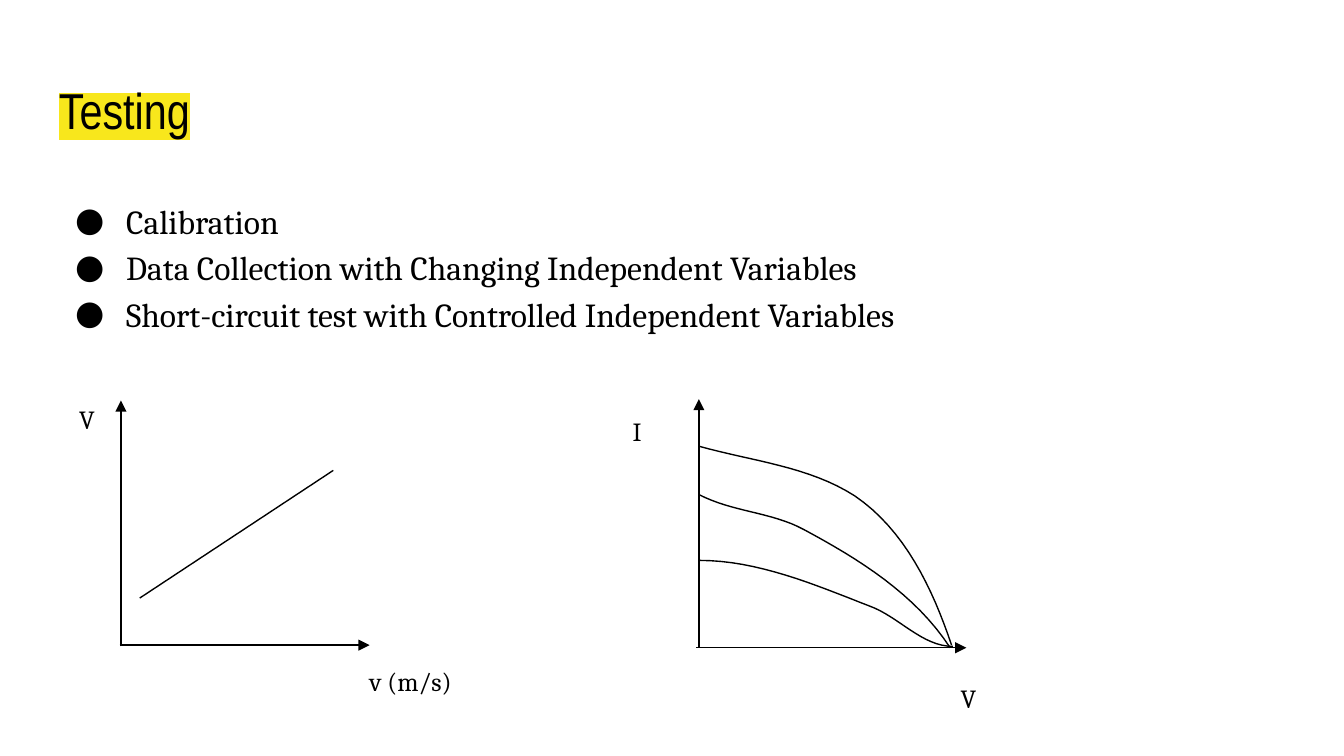
from lxml.etree import SubElement
from pptx import Presentation
from pptx.dml.color import RGBColor
from pptx.enum.shapes import MSO_CONNECTOR
from pptx.oxml.ns import qn
from pptx.util import Inches, Pt

COLORS = {"ink": "000000", "highlight": "F8E71C"}


class SlideBuilder:
    """Holds the style and the current slide and draws each kind of element."""

    title_font = "Arial Narrow"
    body_font = "Cambria"
    line_width = Pt(0.75)
    curve_steps = 16

    def __init__(self, slide):
        self.slide = slide

    def text_frame(self, left, top, width, height):
        shape = self.slide.shapes.add_textbox(
            Inches(left), Inches(top), Inches(width), Inches(height))
        frame = shape.text_frame
        frame.word_wrap = True
        frame.margin_left = frame.margin_right = Inches(0.1)
        frame.margin_top = frame.margin_bottom = Inches(0.1)
        return frame

    def style_font(self, font, name, size):
        font.name = name
        font.size = Pt(size)
        font.color.rgb = RGBColor.from_string(COLORS["ink"])

    def title(self, text, left, top, width, height):
        paragraph = self.text_frame(left, top, width, height).paragraphs[0]
        run = paragraph.add_run()
        run.text = text
        self.style_font(run.font, self.title_font, 27)
        properties = run.font._element
        highlight = SubElement(properties, qn("a:highlight"))
        SubElement(highlight, qn("a:srgbClr"), val=COLORS["highlight"])
        properties.find(qn("a:solidFill")).addnext(highlight)

    def bullets(self, items, left, top, width, height):
        frame = self.text_frame(left, top, width, height)
        for index, item in enumerate(items):
            paragraph = frame.add_paragraph() if index else frame.paragraphs[0]
            paragraph.text = item
            paragraph.line_spacing = 1.15
            self.style_font(paragraph.font, self.body_font, 18)
            properties = paragraph._p.get_or_add_pPr()
            properties.set("marL", str(Inches(0.5)))
            properties.set("indent", str(Inches(-0.38)))
            color = SubElement(properties, qn("a:buClr"))
            SubElement(color, qn("a:srgbClr"), val=COLORS["ink"])
            SubElement(properties, qn("a:buSzPts"), val="1800")
            SubElement(properties, qn("a:buFont"), typeface=self.body_font)
            SubElement(properties, qn("a:buChar"), char="●")
            properties.append(properties.find(qn("a:defRPr")))

    def label(self, text, left, top, width):
        paragraph = self.text_frame(left, top, width, 0.44).paragraphs[0]
        paragraph.text = text
        self.style_font(paragraph.font, self.body_font, 14)

    def style_line(self, line):
        line.color.rgb = RGBColor.from_string(COLORS["ink"])
        line.width = self.line_width

    def line(self, start, end, arrow=False):
        connector = self.slide.shapes.add_connector(
            MSO_CONNECTOR.STRAIGHT, *map(Inches, start + end))
        self.style_line(connector.line)
        if arrow:
            SubElement(connector.line._get_or_add_ln(), qn("a:tailEnd"), type="triangle")
        SubElement(connector._element.spPr, qn("a:effectLst"))

    def curve(self, start, *segments):
        points = []
        anchor = start
        for first, second, end in segments:
            for step in range(1, self.curve_steps + 1):
                t = step / self.curve_steps
                u = 1 - t
                points.append(tuple(
                    Inches(u**3 * a + 3 * u * u * t * b + 3 * u * t * t * c + t**3 * d)
                    for a, b, c, d in zip(anchor, first, second, end)))
            anchor = end
        builder = self.slide.shapes.build_freeform(*map(Inches, start))
        builder.add_line_segments(points, close=False)
        shape = builder.convert_to_shape()
        shape.shadow.inherit = False
        shape.fill.background()
        self.style_line(shape.line)


def main():
    presentation = Presentation()
    presentation.slide_width = Inches(10)
    presentation.slide_height = presentation.slide_width * 9 // 16
    builder = SlideBuilder(presentation.slides.add_slide(presentation.slide_layouts[6]))

    builder.title("Testing", 0.34, 0.49, 9.32, 0.63)
    builder.bullets([
        "Calibration",
        "Data Collection with Changing Independent Variables",
        "Short-circuit test with Controlled Independent Variables",
    ], 0.34, 1.35, 9.32, 3.65)

    builder.line((0.89, 4.8), (2.75, 4.8), arrow=True)
    builder.line((0.9, 4.81), (0.9, 2.98), arrow=True)
    builder.line((1.04, 4.45), (2.48, 3.5))
    builder.label("V", 0.49, 2.9, 0.31)
    builder.label("v (m/s)", 2.65, 4.85, 0.86)

    builder.line((5.18, 4.82), (7.19, 4.82), arrow=True)
    builder.line((5.2, 4.82), (5.2, 2.97), arrow=True)
    builder.curve((5.2, 3.32),
                  ((5.59, 3.43), (6.02, 3.47), (6.36, 3.69)),
                  ((6.73, 3.94), (6.94, 4.38), (7.08, 4.8)))
    builder.curve((5.2, 3.68),
                  ((5.45, 3.81), (5.74, 3.81), (5.98, 3.94)),
                  ((6.39, 4.16), (6.81, 4.42), (7.07, 4.82)))
    builder.curve((5.2, 4.17),
                  ((5.64, 4.17), (6.06, 4.35), (6.47, 4.51)),
                  ((6.69, 4.59), (6.86, 4.81), (7.09, 4.81)))
    builder.label("I", 4.61, 2.99, 0.43)
    builder.label("V", 7.05, 4.98, 0.52)

    presentation.save("out.pptx")


if __name__ == "__main__":
    main()
